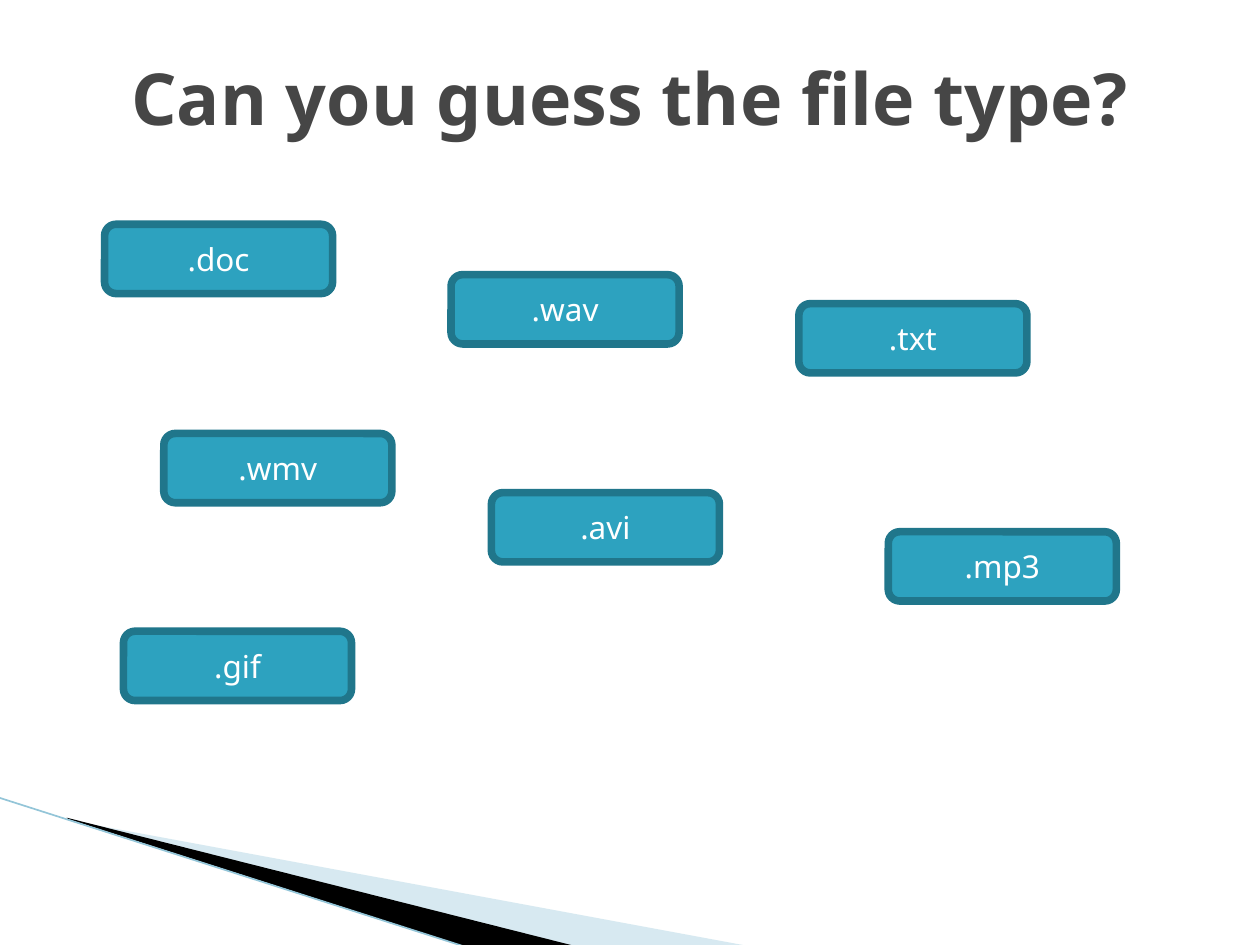
from lxml import etree
from pptx import Presentation
from pptx.dml.color import RGBColor
from pptx.enum.shapes import MSO_CONNECTOR, MSO_SHAPE
from pptx.enum.text import MSO_ANCHOR, PP_ALIGN
from pptx.oxml.ns import qn
from pptx.util import Inches, Pt

STRAIGHT = MSO_CONNECTOR.STRAIGHT
ROUNDED = MSO_SHAPE.ROUNDED_RECTANGLE
MIDDLE = MSO_ANCHOR.MIDDLE
CENTER = PP_ALIGN.CENTER

FONT = "Noto Sans"
COLORS = {
    "title": "464646",
    "button": "2DA2BF",
    "border": "20768B",
    "label": "FFFFFF",
    "pale": "9CCADC",
    "black": "000000",
    "edge": "93C5D8",
}


def rgb(name):
    return RGBColor.from_string(COLORS[name])


def add_text(sp, text, size, color, bold=False):
    tf = sp.text_frame
    tf.word_wrap = True
    tf.vertical_anchor = MIDDLE
    p = tf.paragraphs[0]
    p.alignment = CENTER
    r = p.add_run()
    r.text = text
    r.font.name = FONT
    r.font.size = Pt(size)
    r.font.bold = bold
    r.font.color.rgb = rgb(color)


prs = Presentation()
prs.slide_width = Inches(10)
prs.slide_height = Inches(7.5)
s = prs.slides.add_slide(prs.slide_layouts[6])

wedges = [
    ("pale", 40, [(0.55, 6.51), (5.95, 7.51), (4.56, 7.51), (0.55, 6.5)]),
    ("black", 100, [(0.53, 6.49), (4.57, 7.51), (3.72, 7.52), (0.54, 6.5)]),
]
for color, opacity, points in wedges:
    corners = [(Inches(x), Inches(y)) for x, y in points]
    fb = s.shapes.build_freeform(*corners[0])
    fb.add_line_segments(corners[1:], close=True)
    sp = fb.convert_to_shape()
    sp.shadow.inherit = False
    sp.fill.solid()
    sp.fill.fore_color.rgb = rgb(color)
    sp.line.fill.background()
    if opacity < 100:
        clr = sp.fill._xPr.find(qn("a:solidFill"))[0]
        etree.SubElement(clr, qn("a:alpha")).set("val", str(opacity * 1000))

edge = s.shapes.add_connector(
    STRAIGHT, Inches(-0.01), Inches(6.33), Inches(3.71), Inches(7.52))
edge.line.color.rgb = rgb("edge")
edge.line.width = Pt(0.95)
etree.SubElement(edge._element.spPr, qn("a:effectLst"))

title = s.shapes.add_textbox(Inches(0.5), Inches(0.3), Inches(9), Inches(0.93))
add_text(title, "Can you guess the file type?", size=41, color="title", bold=True)

buttons = [
    (".doc", 0.83, 1.78),
    (".wav", 3.58, 2.18),
    (".wmv", 1.3, 3.44),
    (".avi", 3.9, 3.91),
    (".txt", 6.34, 2.41),
    (".mp3", 7.05, 4.22),
    (".gif", 0.98, 5.01),
]
for text, x, y in buttons:
    sp = s.shapes.add_shape(ROUNDED, Inches(x), Inches(y), Inches(1.81), Inches(0.55))
    sp.shadow.inherit = False
    sp.fill.solid()
    sp.fill.fore_color.rgb = rgb("button")
    sp.line.color.rgb = rgb("border")
    sp.line.width = Pt(4.33)
    add_text(sp, text, size=18, color="label")

prs.save("out.pptx")
